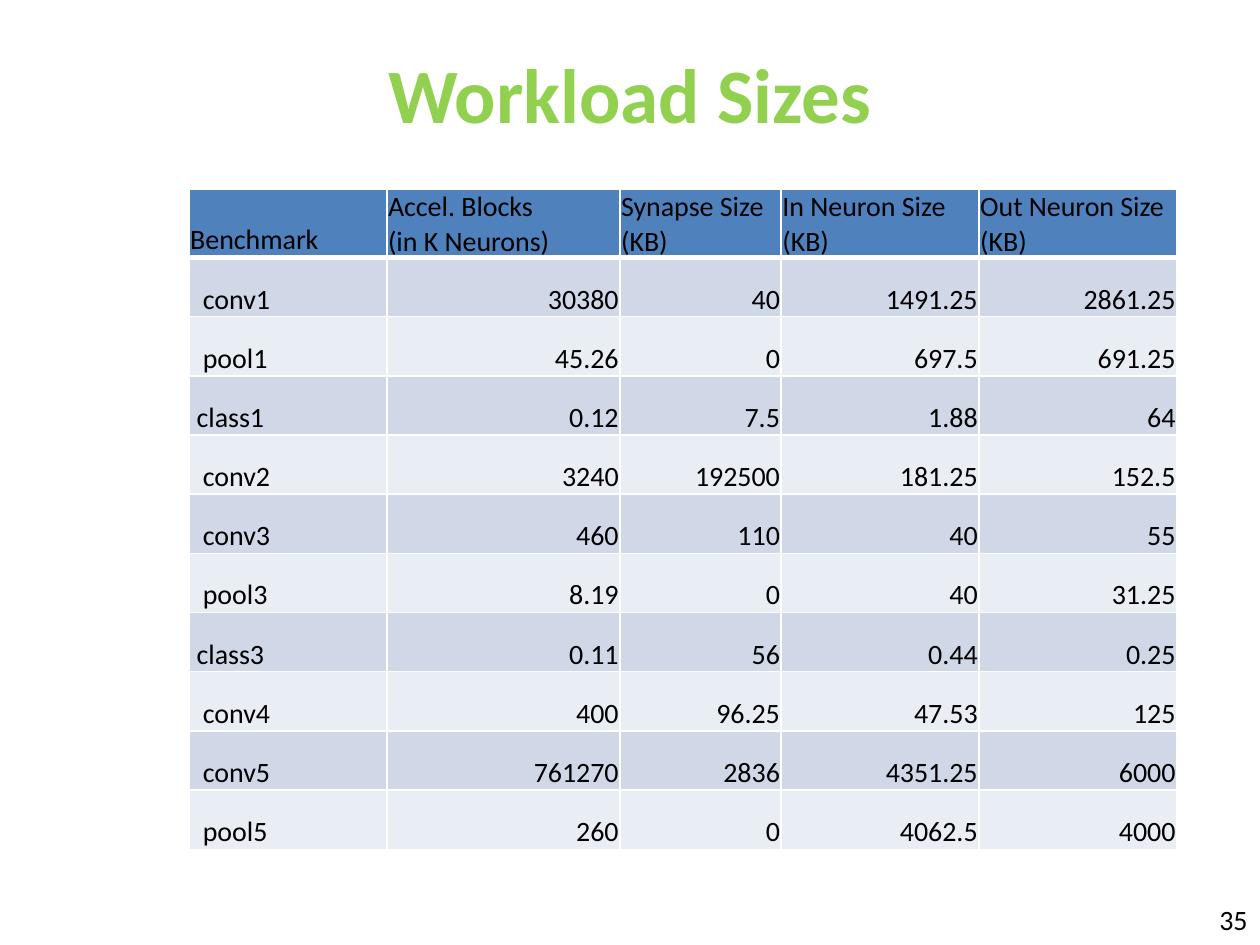
"""Build the workload sizes slide: a title, a banded table and a page number."""
from dataclasses import dataclass

from lxml.etree import SubElement
from pptx import Presentation
from pptx.dml.color import RGBColor
from pptx.enum.text import MSO_ANCHOR as Anchor, PP_ALIGN as Align
from pptx.oxml.ns import qn
from pptx.util import Inches, Pt

GREEN = RGBColor(0x92, 0xD0, 0x50)
BLACK = RGBColor(0x00, 0x00, 0x00)
WHITE = RGBColor(0xFF, 0xFF, 0xFF)
HEADER_BLUE = RGBColor(0x4F, 0x81, 0xBD)
BANDS = (RGBColor(0xD0, 0xD8, 0xE8), RGBColor(0xE9, 0xED, 0xF4))

FONT = "Calibri"
BODY_SIZE = 16
ROW_HEIGHT = 0.47
COLUMN_WIDTHS = (1.57, 1.85, 1.28, 1.57, 1.57)
CELL_MARGIN = 0.01
INDENT_STEP = 0.05
HEADERS = (
    "Benchmark",
    "Accel. Blocks\n(in K Neurons)",
    "Synapse Size (KB)",
    "In Neuron Size (KB)",
    "Out Neuron Size (KB)",
)


@dataclass(frozen=True)
class Label:
    text: str
    box: tuple[float, float, float, float]
    size: int
    color: RGBColor
    align: Align
    bold: bool = False


@dataclass(frozen=True)
class Workload:
    name: str
    values: tuple[str, str, str, str]

    @property
    def indent(self) -> float:
        return INDENT_STEP * (1 if self.name.startswith("class") else 2)


LABELS = (
    Label("Workload Sizes", (0.69, 0.01, 8.62, 1.45), 44, GREEN, Align.CENTER, True),
    Label("35", (7.67, 7.1, 2.33, 0.4), BODY_SIZE, BLACK, Align.RIGHT),
)
WORKLOADS = (
    Workload("conv1", ("30380", "40", "1491.25", "2861.25")),
    Workload("pool1", ("45.26", "0", "697.5", "691.25")),
    Workload("class1", ("0.12", "7.5", "1.88", "64")),
    Workload("conv2", ("3240", "192500", "181.25", "152.5")),
    Workload("conv3", ("460", "110", "40", "55")),
    Workload("pool3", ("8.19", "0", "40", "31.25")),
    Workload("class3", ("0.11", "56", "0.44", "0.25")),
    Workload("conv4", ("400", "96.25", "47.53", "125")),
    Workload("conv5", ("761270", "2836", "4351.25", "6000")),
    Workload("pool5", ("260", "0", "4062.5", "4000")),
)


def style_text(frame, size: int, color: RGBColor, align: Align, bold: bool = False) -> None:
    """Apply one font and alignment to every paragraph of a text frame."""
    for paragraph in frame.paragraphs:
        paragraph.alignment = align
        font = paragraph.font
        font.name, font.size, font.bold = FONT, Pt(size), bold
        font.color.rgb = color


def add_label(slide, label: Label) -> None:
    """Add a vertically centred text box."""
    frame = slide.shapes.add_textbox(*map(Inches, label.box)).text_frame
    frame.word_wrap = True
    frame.vertical_anchor = Anchor.MIDDLE
    frame.text = label.text
    style_text(frame, label.size, label.color, label.align, label.bold)


def set_borders(cell, top: int = 1, bottom: int = 1) -> None:
    """Draw white borders with the given top and bottom widths in points."""
    properties = cell._tc.get_or_add_tcPr()
    widths = {"a:lnL": 1, "a:lnR": 1, "a:lnT": top, "a:lnB": bottom}
    for tag, width in widths.items():
        line = SubElement(properties, qn(tag), w=str(Pt(width)))
        fill = SubElement(line, qn("a:solidFill"))
        SubElement(fill, qn("a:srgbClr"), val=str(WHITE))


def fill_cell(cell, text: str, color: RGBColor, align: Align, indent: float = 0) -> None:
    """Set the text, margins and fill of a cell."""
    cell.text = text
    cell.vertical_anchor = Anchor.BOTTOM
    cell.margin_left = Inches(CELL_MARGIN + indent)
    cell.margin_right = cell.margin_top = Inches(CELL_MARGIN)
    cell.margin_bottom = 0
    cell.fill.solid()
    cell.fill.fore_color.rgb = color
    style_text(cell.text_frame, BODY_SIZE, BLACK, align)


def add_workload_table(slide, left: float, top: float) -> None:
    """Add the header row and one banded row per workload."""
    row_count = len(WORKLOADS) + 1
    table = slide.shapes.add_table(
        row_count, len(HEADERS), Inches(left), Inches(top),
        Inches(sum(COLUMN_WIDTHS)), Inches(ROW_HEIGHT * row_count),
    ).table
    for column, width in zip(table.columns, COLUMN_WIDTHS):
        column.width = Inches(width)
    for row in table.rows:
        row.height = Inches(ROW_HEIGHT)
    for column, header in enumerate(HEADERS):
        cell = table.cell(0, column)
        set_borders(cell, bottom=3)
        fill_cell(cell, header, HEADER_BLUE, Align.LEFT)
    for row, workload in enumerate(WORKLOADS, start=1):
        band = BANDS[(row - 1) % len(BANDS)]
        for column, text in enumerate((workload.name, *workload.values)):
            cell = table.cell(row, column)
            set_borders(cell, top=3 if row == 1 else 1)
            if column == 0:
                fill_cell(cell, text, band, Align.LEFT, workload.indent)
            else:
                fill_cell(cell, text, band, Align.RIGHT)


def main() -> None:
    """Build and save the presentation."""
    presentation = Presentation()
    presentation.slide_width, presentation.slide_height = Inches(10), Inches(7.5)
    slide = presentation.slides.add_slide(presentation.slide_layouts[6])
    for label in LABELS:
        add_label(slide, label)
    add_workload_table(slide, 1.5, 1.5)
    presentation.save("out.pptx")


if __name__ == "__main__":
    main()
